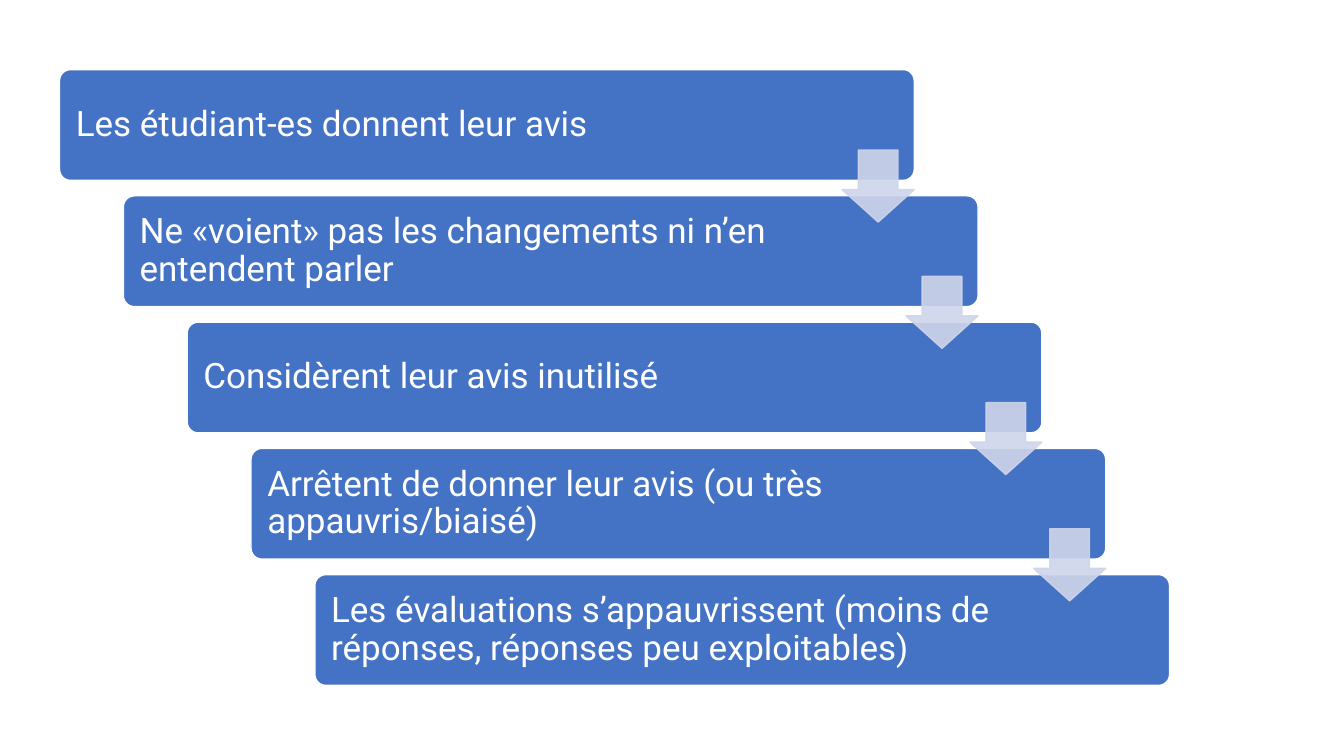
import pptx
import pptx.dml.color
import pptx.enum.shapes
import pptx.enum.text
import pptx.oxml
import pptx.oxml.ns
import pptx.util

SLIDE_W, SLIDE_H = 13.33, 7.5
STEPS = [
    "Les étudiant-es donnent leur avis",
    "Ne «voient» pas les changements ni n’en entendent parler",
    "Considèrent leur avis inutilisé",
    "Arrêtent de donner leur avis (ou très appauvris/biaisé)",
    "Les évaluations s’appauvrissent (moins de réponses, réponses peu exploitables)",
]


def color(hex_code):
    return pptx.dml.color.RGBColor.from_string(hex_code)


def set_alpha(fill_parent, percent):
    """Make the solid colour held by an XML element partly transparent."""
    solid = fill_parent.find(pptx.oxml.ns.qn("a:solidFill"))
    rgb = solid.find(pptx.oxml.ns.qn("a:srgbClr"))
    rgb.append(pptx.oxml.parse_xml(
        f'<a:alpha {pptx.oxml.ns.nsdecls("a")} val="{percent * 1000}"/>'))


def add_preset(parent, preset, box, fill, line, adjustments):
    shape = parent.shapes.add_shape(preset, *map(pptx.util.Inches, box))
    shape.shadow.inherit = False
    shape.fill.solid()
    shape.fill.fore_color.rgb = color(fill)
    shape.line.color.rgb = color(line)
    shape.line.width = pptx.util.Pt(1)
    for index, value in enumerate(adjustments):
        shape.adjustments[index] = value
    return shape


def write(shape, text, size, font, ink, margins):
    """Write left-aligned text; margins are left, top, right, bottom in inches."""
    frame = shape.text_frame
    frame.word_wrap = True
    frame.vertical_anchor = pptx.enum.text.MSO_ANCHOR.MIDDLE
    (frame.margin_left, frame.margin_top,
     frame.margin_right, frame.margin_bottom) = map(pptx.util.Inches, margins)
    paragraph = frame.paragraphs[0]
    paragraph.alignment = pptx.enum.text.PP_ALIGN.LEFT
    paragraph.line_spacing = 0.9
    run = paragraph.add_run()
    run.text = text
    run.font.size = pptx.util.Pt(size)
    run.font.name = font
    run.font.color.rgb = color(ink)


def add_step(parent, box, text):
    step = add_preset(parent, pptx.enum.shapes.MSO_SHAPE.ROUNDED_RECTANGLE,
                      box, "4472C4", "FFFFFF", [0.1])
    write(step, text, size=25, font="Roboto", ink="FFFFFF",
          margins=(0.13, 0.13, box[2] / 6, 0.13))


def add_arrow(parent, step_box, pitch):
    """Place an arrow at the step's right end, centred on the gap to the next."""
    left, top, width, height = step_box
    side = height * 0.65
    gap_middle = top + (height + pitch) / 2
    arrow = add_preset(parent, pptx.enum.shapes.MSO_SHAPE.DOWN_ARROW,
                       (left + width - side, gap_middle - side / 2 - 0.02, side, side),
                       "CFD5EA", "CFD5EA", [0.55, 0.45])
    properties = arrow._element.spPr
    set_alpha(properties, 90)
    set_alpha(properties.find(pptx.oxml.ns.qn("a:ln")), 90)


def add_cascade(slide, box, texts):
    """Stagger the steps from the box's top left to its bottom right."""
    left, top, width, height = box
    step_w, step_h = width * 0.77, height * 0.18
    shift = (width - step_w) / (len(texts) - 1)
    pitch = (height - step_h) / (len(texts) - 1)
    step_boxes = [(left + i * shift, top + i * pitch, step_w, step_h)
                  for i in range(len(texts))]
    cascade = slide.shapes.add_group_shape()
    for step_box, text in zip(step_boxes, texts):
        add_step(cascade, step_box, text)
    for step_box in step_boxes[:-1]:
        add_arrow(cascade, step_box, pitch)


def main():
    deck = pptx.Presentation()
    deck.slide_width = pptx.util.Inches(SLIDE_W)
    deck.slide_height = pptx.util.Inches(SLIDE_H)
    slide = deck.slides.add_slide(deck.slide_layouts[6])
    add_cascade(slide, (0.59, 0.69, 11.01, 6.11), STEPS)
    deck.save("out.pptx")


if __name__ == "__main__":
    main()
